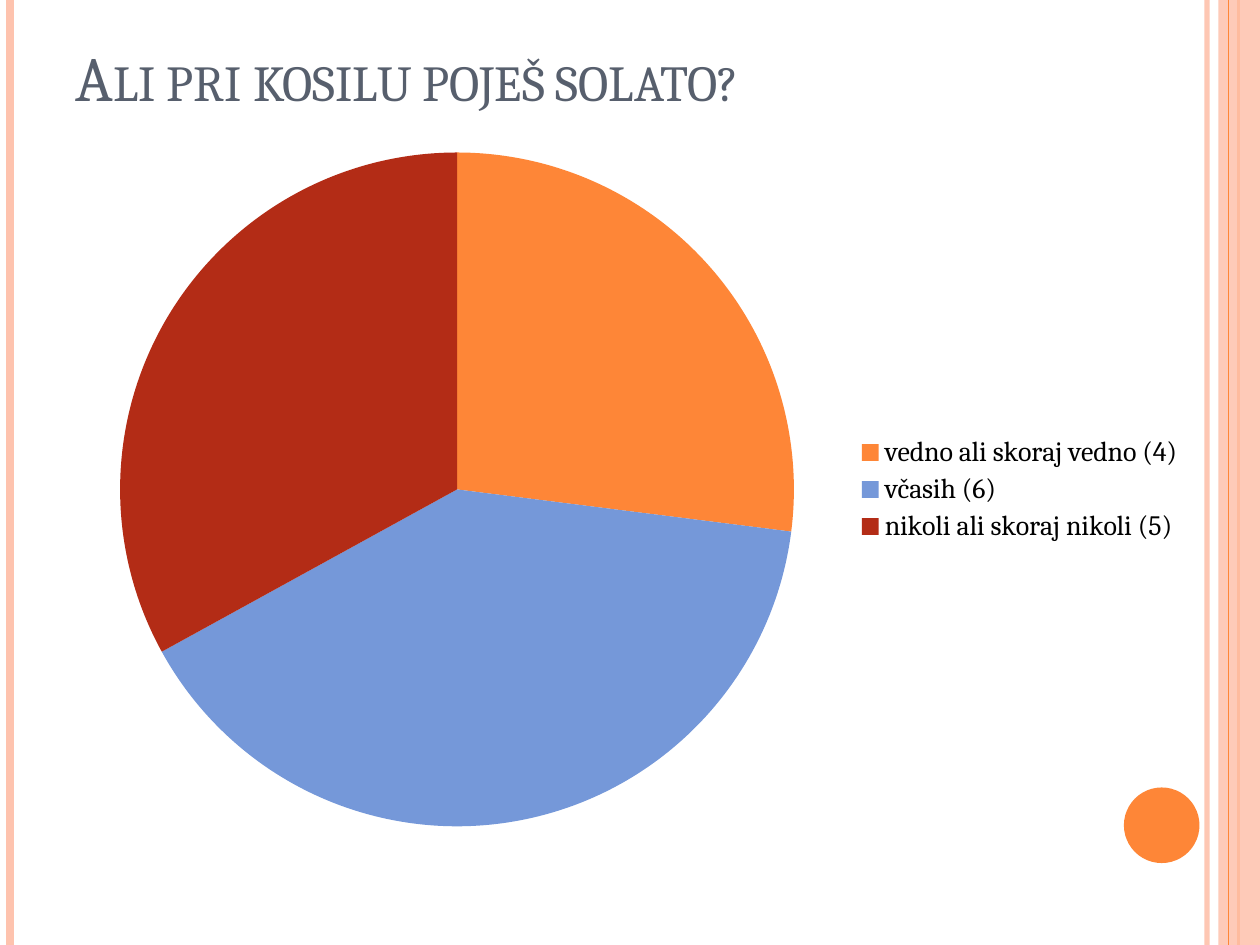
"""Build a slide with a pie chart of how often salad is eaten at lunch."""
import pptx
import pptx.chart.data
import pptx.dml.color
import pptx.enum.chart
import pptx.enum.shapes
import pptx.enum.text
import pptx.oxml
import pptx.oxml.ns
import pptx.util

Inches = pptx.util.Inches
Pt = pptx.util.Pt
FONT = "Cambria"
ORANGE, PEACH = "FE8637", "FEC3AE"


def paint(color_format, color, alpha=100):
    color_format.rgb = pptx.dml.color.RGBColor.from_string(color)
    if alpha < 100:
        node = color_format._xFill.find(pptx.oxml.ns.qn("a:srgbClr"))
        node.append(pptx.oxml.parse_xml(
            f'<a:alpha {pptx.oxml.ns.nsdecls("a")} val="{alpha * 1000}"/>'))


def add_stripe(page, left, width, color, alpha=100):
    stripe = page.shapes.add_connector(
        pptx.enum.shapes.MSO_CONNECTOR.STRAIGHT,
        Inches(left), 0, Inches(left), Inches(7.5))
    stripe.line.width = Pt(width)
    stripe.line.fill.solid()
    paint(stripe.line.fill.fore_color, color, alpha)
    stripe._element.spPr.append(pptx.oxml.parse_xml(
        f'<a:effectLst {pptx.oxml.ns.nsdecls("a")}/>'))


deck = pptx.Presentation()
deck.slide_width, deck.slide_height = Inches(10), Inches(7.5)
page = deck.slides.add_slide(deck.slide_layouts[5])

for left, width, color, alpha in [(9.58, 3, PEACH, 93), (0.08, 4.5, PEACH, 100),
                                  (9.83, 1.5, ORANGE, 100)]:
    add_stripe(page, left, width, color, alpha)

band = page.shapes.add_shape(pptx.enum.shapes.MSO_SHAPE.RECTANGLE,
                             Inches(9.67), 0, Inches(0.33), Inches(7.5))
add_stripe(page, 9.75, 0.75, ORANGE)
dot = page.shapes.add_shape(pptx.enum.shapes.MSO_SHAPE.OVAL,
                            Inches(8.92), Inches(6.25), Inches(0.6), Inches(0.6))
for shape, color, alpha in [(band, PEACH, 87), (dot, ORANGE, 100)]:
    shape.shadow.inherit = False
    shape.line.fill.background()
    shape.fill.solid()
    paint(shape.fill.fore_color, color, alpha)

title = page.shapes.title
title.left, title.top = Inches(0.5), Inches(0.3)
title.width, title.height = Inches(8.17), Inches(1.25)
frame = title.text_frame
frame.text = "Ali pri kosilu poješ solato?"
frame.auto_size = pptx.enum.text.MSO_AUTO_SIZE.NONE
frame.vertical_anchor = pptx.enum.text.MSO_ANCHOR.BOTTOM
frame.margin_bottom = Inches(0.64)
para = frame.paragraphs[0]
para.alignment = pptx.enum.text.PP_ALIGN.LEFT
span = para.runs[0]
span.font.name, span.font.size = FONT, Pt(36)
span.font._element.set("cap", "small")
paint(span.font.color, "575F6D")

answers = pptx.chart.data.CategoryChartData()
answers.categories = ["vedno ali skoraj vedno (4)", "včasih (6)",
                      "nikoli ali skoraj nikoli (5)"]
answers.add_series("Series 1", (27, 40, 33))
chart = page.shapes.add_chart(pptx.enum.chart.XL_CHART_TYPE.PIE, Inches(0.5),
                              Inches(1.07), Inches(9), Inches(5.63), answers).chart
chart.has_title = False
chart.font.name, chart.font.size = FONT, Pt(10)
paint(chart.font.color, "000000")
chart.has_legend = True
chart.legend.position = pptx.enum.chart.XL_LEGEND_POSITION.RIGHT
chart.legend.include_in_layout = False
chart.legend.font.name, chart.legend.font.size = FONT, Pt(16)
paint(chart.legend.font.color, "000000")

plot = chart.plots[0]
plot.vary_by_categories = True
for index, color in enumerate([ORANGE, "7598D9", "B32C16"]):
    point = plot.series[0].points[index]
    point.format.fill.solid()
    paint(point.format.fill.fore_color, color)
    point.format.line.fill.background()

plot_area = chart._chartSpace.chart.plotArea
for old_layout in plot_area.findall(pptx.oxml.ns.qn("c:layout")):
    plot_area.remove(old_layout)
plot_area.insert(0, pptx.oxml.parse_xml(
    f'<c:layout {pptx.oxml.ns.nsdecls("c")}><c:manualLayout>'
    '<c:layoutTarget val="inner"/><c:xMode val="edge"/><c:yMode val="edge"/>'
    '<c:x val="0.05"/><c:y val="0.025"/><c:w val="0.595"/><c:h val="0.95"/>'
    '</c:manualLayout></c:layout>'))

deck.save("out.pptx")
